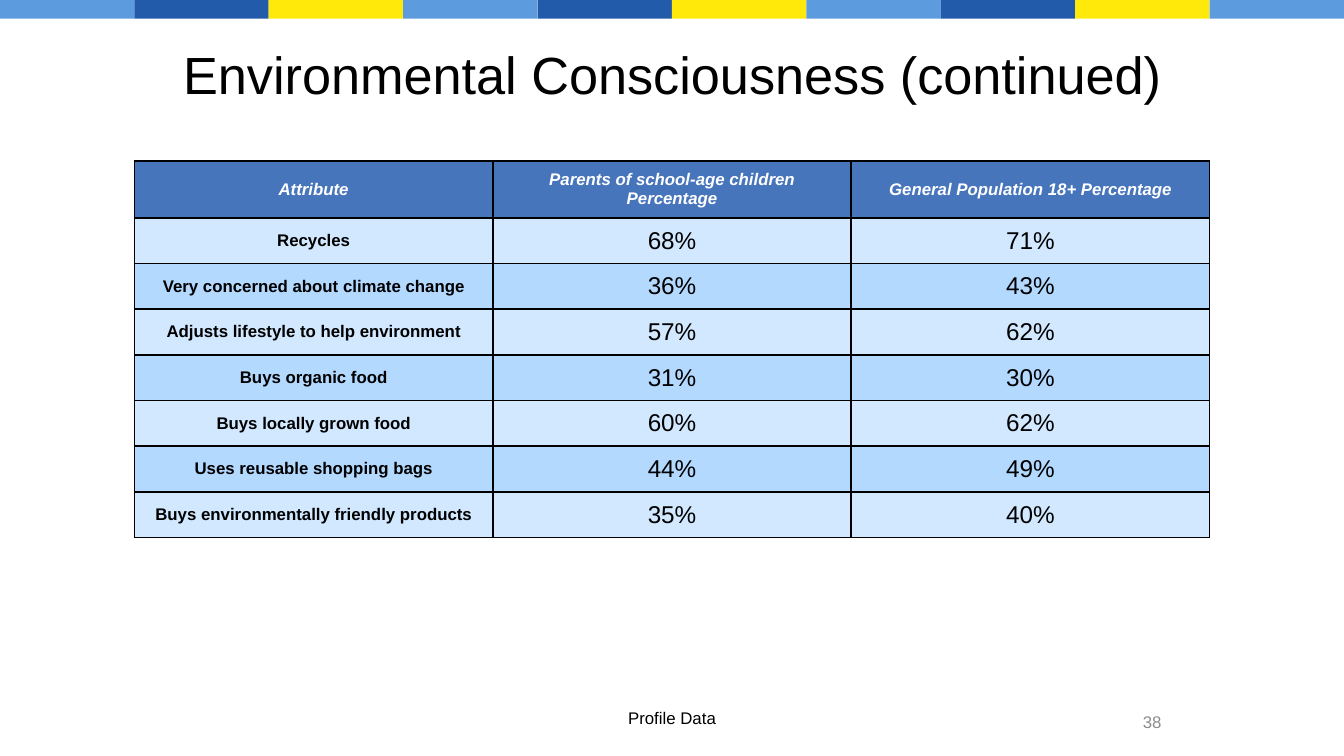
from itertools import cycle

from lxml.etree import SubElement
from pptx import Presentation
from pptx.dml.color import RGBColor
from pptx.enum.shapes import MSO_SHAPE
from pptx.enum.text import MSO_ANCHOR, PP_ALIGN
from pptx.oxml.ns import qn
from pptx.util import Inches, Pt

FONT = "Arial"
BLACK = RGBColor(0x00, 0x00, 0x00)
WHITE = RGBColor(0xFF, 0xFF, 0xFF)
GRAY = RGBColor(0x8C, 0x8C, 0x8C)
SKY = RGBColor(0x5B, 0x9B, 0xDE)
NAVY = RGBColor(0x23, 0x5B, 0xAB)
YELLOW = RGBColor(0xFF, 0xE9, 0x0A)
HEADER_BLUE = RGBColor(0x47, 0x75, 0xBC)
ROW_LIGHT = RGBColor(0xD1, 0xE8, 0xFF)
ROW_DARK = RGBColor(0xB3, 0xD9, 0xFF)

HEADER = ("Attribute", "Parents of school-age children Percentage",
          "General Population 18+ Percentage")
ROWS = (
    ("Recycles", "68%", "71%"),
    ("Very concerned about climate change", "36%", "43%"),
    ("Adjusts lifestyle to help environment", "57%", "62%"),
    ("Buys organic food", "31%", "30%"),
    ("Buys locally grown food", "60%", "62%"),
    ("Uses reusable shopping bags", "44%", "49%"),
    ("Buys environmentally friendly products", "35%", "40%"),
)


def add_span(para, text, size, color, bold=False, italic=False):
    span = para.add_run()
    span.text = text
    span.font.name = FONT
    span.font.size = Pt(size)
    span.font.color.rgb = color
    span.font.bold = bold
    span.font.italic = italic


def add_band(page, left, top, width, height, count=10):
    """Row of equal colour blocks."""
    block_width = width / count
    for index, color in zip(range(count), cycle((SKY, NAVY, YELLOW))):
        block = page.shapes.add_shape(
            MSO_SHAPE.RECTANGLE, Inches(left + index * block_width), Inches(top),
            Inches(block_width), Inches(height))
        block.shadow.inherit = False
        block.fill.solid()
        block.fill.fore_color.rgb = color
        block.line.fill.background()


def add_label(page, left, top, width, height, text, size, color, align, anchor):
    box = page.shapes.add_textbox(Inches(left), Inches(top), Inches(width), Inches(height))
    frame = box.text_frame
    frame.word_wrap = True
    frame.vertical_anchor = anchor
    para = frame.paragraphs[0]
    para.alignment = align
    add_span(para, text, size, color)


def add_borders(cell):
    """Thin black line on each side, placed ahead of the cell fill."""
    props = cell._tc.get_or_add_tcPr()
    for index, side in enumerate(("a:lnL", "a:lnR", "a:lnT", "a:lnB")):
        line = SubElement(props, qn(side), w=str(Pt(1)))
        fill = SubElement(line, qn("a:solidFill"))
        SubElement(fill, qn("a:srgbClr"), val=str(BLACK))
        props.insert(index, line)


def add_comparison(page, left, top, width, header_height, row_height):
    """Table with a header row and two alternating row colours."""
    lines = (HEADER, *ROWS)
    columns = len(HEADER)
    height = header_height + row_height * len(ROWS)
    table = page.shapes.add_table(len(lines), columns, Inches(left), Inches(top),
                                  Inches(width), Inches(height)).table
    for column in table.columns:
        column.width = Inches(width / columns)
    for row, texts in enumerate(lines):
        is_header = row == 0
        table.rows[row].height = Inches(header_height if is_header else row_height)
        for column, text in enumerate(texts):
            cell = table.cell(row, column)
            cell.margin_left = cell.margin_right = Inches(0.07)
            cell.margin_top = cell.margin_bottom = Inches(0.06)
            cell.vertical_anchor = MSO_ANCHOR.MIDDLE
            cell.fill.solid()
            cell.fill.fore_color.rgb = (
                HEADER_BLUE if is_header else ROW_LIGHT if row % 2 else ROW_DARK)
            add_borders(cell)
            para = cell.text_frame.paragraphs[0]
            para.alignment = PP_ALIGN.CENTER
            is_label = is_header or column == 0
            add_span(para, text, 9 if is_label else 13,
                     WHITE if is_header else BLACK, bold=is_label, italic=is_header)


def add_footer(page, left, top, width):
    """Centred source name with the page number to its right."""
    add_label(page, left + width * 0.4, top, width * 0.2, 0.25, "Profile Data",
              9, BLACK, PP_ALIGN.CENTER, MSO_ANCHOR.TOP)
    add_label(page, left + width * 0.75, top, width * 0.124, 0.3, "38",
              9, GRAY, PP_ALIGN.RIGHT, MSO_ANCHOR.MIDDLE)


def main():
    deck = Presentation()
    width = 10
    deck.slide_width = Inches(width)
    deck.slide_height = Inches(width * 9 / 16)
    page = deck.slides.add_slide(deck.slide_layouts[6])

    add_band(page, 0, 0, width, 0.14)
    add_label(page, width * 0.05, 0.22, width * 0.9, 0.65,
              "Environmental Consciousness (continued)", 28, BLACK,
              PP_ALIGN.CENTER, MSO_ANCHOR.MIDDLE)
    add_comparison(page, width * 0.1, 1.2, width * 0.8, 0.42, 0.34)
    add_footer(page, 0, 5.22, width)

    deck.save("out.pptx")


if __name__ == "__main__":
    main()
